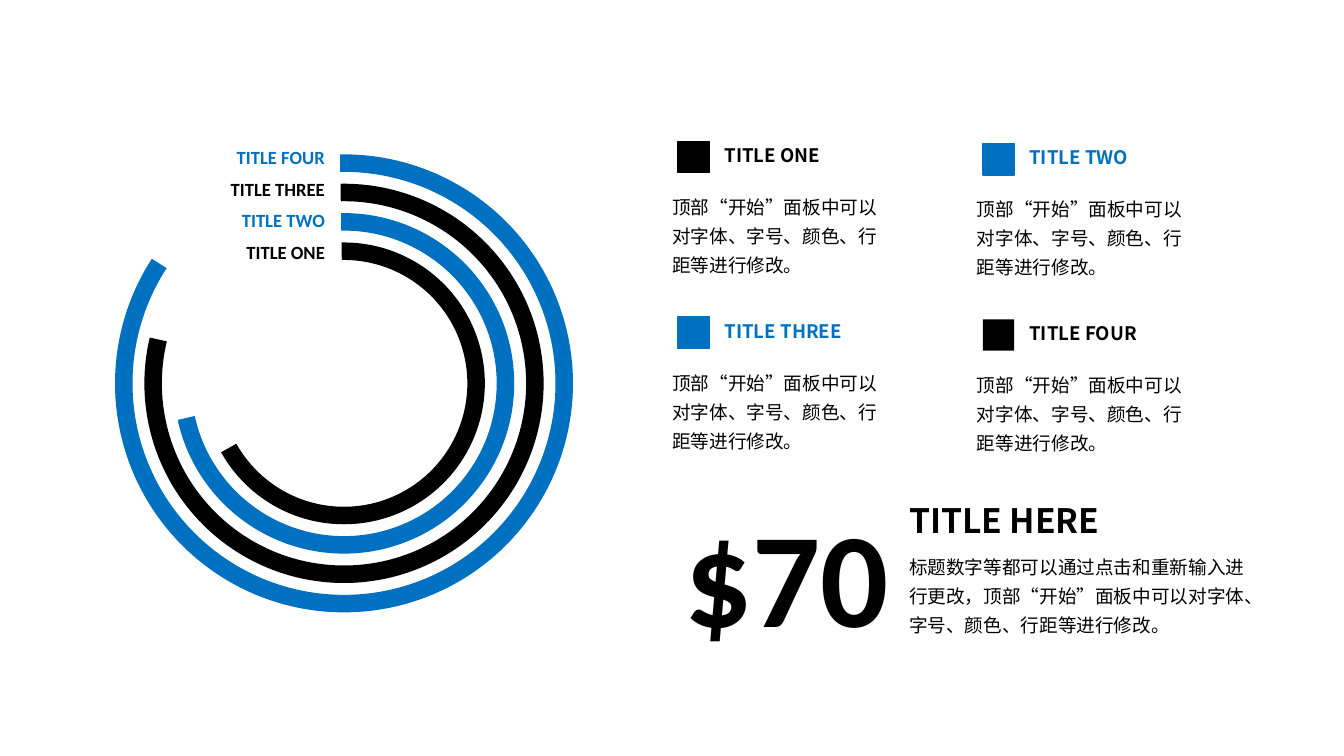
from pptx import Presentation
from pptx.dml.color import RGBColor
from pptx.enum.shapes import MSO_SHAPE as Shape
from pptx.enum.text import MSO_ANCHOR as Anchor, MSO_AUTO_SIZE as AutoSize, PP_ALIGN as Align
from pptx.oxml.ns import qn
from pptx.util import Cm, Pt

COLORS = {"black": "000000", "blue": "0070C0"}
LATIN, CJK = "Calibri", "Noto Sans CJK SC"

# From the innermost ring outwards: label, colour, end angle
RINGS = [
    ("TITLE ONE", "black", 240.72),
    ("TITLE TWO", "blue", 257.63),
    ("TITLE THREE", "black", 283.3),
    ("TITLE FOUR", "blue", 302.98),
]
# Row by row: title, colour, title width, outlined marker
CARDS = [
    ("TITLE ONE", "black", 3.25, True),
    ("TITLE TWO", "blue", 4.14, True),
    ("TITLE THREE", "blue", 4.04, True),
    ("TITLE FOUR", "black", 4.14, False),
]
CARD_TEXT = "顶部“开始”面板中可以对字体、字号、颜色、行距等进行修改。"
SUMMARY = "标题数字等都可以通过点击和重新输入进行更改，顶部“开始”面板中可以对字体、字号、颜色、行距等进行修改。"


def color(name):
    return RGBColor.from_string(COLORS[name])


class Page:
    def __init__(self, deck):
        self.shapes = deck.slides.add_slide(deck.slide_layouts[6]).shapes

    def text(self, text, left, top, width, height, *, size=13.3, font=CJK, ink="black",
             bold=False, align=Align.LEFT, anchor=Anchor.TOP, spacing=None):
        box = self.shapes.add_textbox(Cm(left), Cm(top), Cm(width), Cm(height))
        frame = box.text_frame
        frame.word_wrap = True
        frame.auto_size = AutoSize.SHAPE_TO_FIT_TEXT
        frame.vertical_anchor = anchor
        para = frame.paragraphs[0]
        para.alignment = align
        para.line_spacing = spacing
        span = para.add_run()
        span.text = text
        span.font.size = Pt(size)
        span.font.name = font
        span.font.bold = bold
        span.font.color.rgb = color(ink)
        east_asian = span.font._element.makeelement(qn("a:ea"), {"typeface": font})
        span.font._element.append(east_asian)

    def square(self, left, top, side, ink, outlined):
        box = self.shapes.add_shape(Shape.RECTANGLE, Cm(left), Cm(top), Cm(side), Cm(side))
        box.shadow.inherit = False
        box.fill.solid()
        box.fill.fore_color.rgb = color(ink)
        if outlined:
            box.line.color.rgb = color(ink)
            box.line.width = Pt(1)
        else:
            box.line.fill.background()

    def ring(self, center_x, center_y, diameter, end_angle, ink):
        """Draw an open ring that runs clockwise from the top to end_angle."""
        radius = diameter / 2
        arc = self.shapes.add_shape(Shape.ARC, Cm(center_x - radius), Cm(center_y - radius),
                                    Cm(diameter), Cm(diameter))
        arc.shadow.inherit = False
        arc.rotation = 270
        # Angles are stored in 1/60000 degree, adjustments in 1/100000
        arc.adjustments[0] = 359 * 0.6
        arc.adjustments[1] = end_angle * 0.6
        arc.fill.background()
        arc.line.color.rgb = color(ink)
        arc.line.width = Pt(12.5)

    def card(self, left, top, title, ink, title_width, outlined):
        self.square(left + 0.4, top, 0.79, ink, outlined)
        self.text(title, left + 1.32, top - 0.06, title_width, 0.84, ink=ink, bold=True)
        self.text(CARD_TEXT, left, top + 1.08, 5.94, 2.49, spacing=1.3)


def main():
    deck = Presentation()
    deck.slide_width, deck.slide_height = Cm(33.87), Cm(19.05)
    page = Page(deck)

    for index, (label, ink, end_angle) in enumerate(RINGS):
        page.ring(8.67, 9.66, 6.66 + 1.48 * index, end_angle, ink)
        page.text(label, 3.23, 5.95 - 0.8 * index, 5.21, 0.84,
                  font=LATIN, ink=ink, bold=True, align=Align.RIGHT)

    for index, card in enumerate(CARDS):
        row, column = divmod(index, 2)
        page.card(16.69 + 7.68 * column, 3.56 + 4.43 * row + 0.06 * column, *card)

    page.text("$70", 16.69, 12.27, 5.97, 4.37, size=96, font=LATIN, bold=True,
              align=Align.RIGHT, anchor=Anchor.MIDDLE)
    page.text("TITLE HERE", 22.66, 12.47, 8.46, 1.27, size=24, bold=True)
    page.text(SUMMARY, 22.66, 13.72, 9.09, 2.49, spacing=1.3)
    deck.save("out.pptx")


if __name__ == "__main__":
    main()
